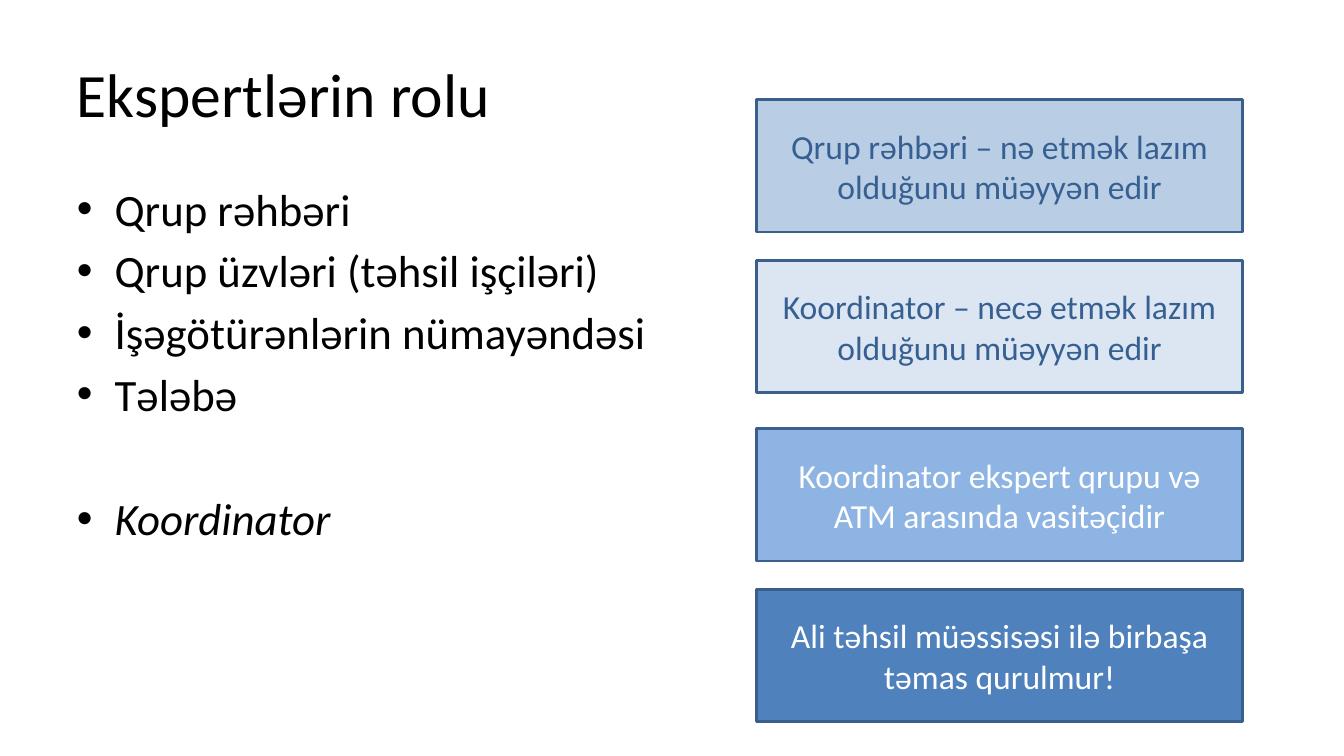
from lxml import etree
from pptx import Presentation
from pptx.dml.color import RGBColor
from pptx.enum.shapes import MSO_SHAPE
from pptx.enum.text import MSO_ANCHOR, PP_ALIGN
from pptx.oxml.ns import qn
from pptx.util import Cm, Pt

RECTANGLE = MSO_SHAPE.RECTANGLE
MIDDLE, TOP = MSO_ANCHOR.MIDDLE, MSO_ANCHOR.TOP
CENTER, LEFT = PP_ALIGN.CENTER, PP_ALIGN.LEFT

FONT = "Calibri"
COLORS = {
    "black": "000000",
    "white": "FFFFFF",
    "navy": "376092",
    "outline": "3A5F8C",
    "light": "B9CDE5",
    "pale": "DCE6F2",
    "medium": "8EB4E3",
    "strong": "4F81BD",
}

TITLE = "Ekspertlərin rolu"
ROLES = [
    ("Qrup rəhbəri", 5.6, False),
    ("Qrup üzvləri (təhsil işçiləri)", 5.6, False),
    ("İşəgötürənlərin nümayəndəsi", 5.6, False),
    ("Tələbə", 5.6, False),
    ("Koordinator", 50.3, True),
]
DUTIES = [
    ("Qrup rəhbəri – nə etmək lazım olduğunu müəyyən edir", 2.51, "light", "navy"),
    ("Koordinator – necə etmək lazım olduğunu müəyyən edir", 6.56, "pale", "navy"),
    ("Koordinator ekspert qrupu və ATM arasında vasitəçidir", 10.8, "medium", "white"),
    ("Ali təhsil müəssisəsi ilə birbaşa təmas qurulmur!", 14.85, "strong", "white"),
]
TEXT_LEFT, TEXT_WIDTH = 1.69, 30.48
DUTY_LEFT, DUTY_WIDTH, DUTY_HEIGHT = 19.07, 12.24, 3.34
BULLET_INDENT = 0.95


def color(name):
    return RGBColor.from_string(COLORS[name])


def write_text(shape, lines, size, color_name, alignment, anchor):
    frame = shape.text_frame
    frame.word_wrap = True
    frame.vertical_anchor = anchor
    frame.text = "\n".join(lines)
    for paragraph in frame.paragraphs:
        paragraph.alignment = alignment
        for run in paragraph.runs:
            run.font.name = FONT
            run.font.size = Pt(size)
            run.font.color.rgb = color(color_name)
    return frame.paragraphs


def add_bullet(paragraph):
    properties = paragraph._p.get_or_add_pPr()
    properties.set("marL", str(Cm(BULLET_INDENT)))
    properties.set("indent", str(-Cm(BULLET_INDENT)))
    etree.SubElement(properties, qn("a:buFont")).set("typeface", "Arial")
    etree.SubElement(properties, qn("a:buChar")).set("char", "•")


def add_text(slide, lines, top, height, size, anchor):
    box = slide.shapes.add_textbox(Cm(TEXT_LEFT), Cm(top), Cm(TEXT_WIDTH), Cm(height))
    return write_text(box, lines, size, "black", LEFT, anchor)


def add_duty(slide, text, top, fill, text_color):
    box = slide.shapes.add_shape(
        RECTANGLE, Cm(DUTY_LEFT), Cm(top), Cm(DUTY_WIDTH), Cm(DUTY_HEIGHT)
    )
    box.shadow.inherit = False
    box.fill.solid()
    box.fill.fore_color.rgb = color(fill)
    box.line.color.rgb = color("outline")
    box.line.width = Pt(2)
    write_text(box, [text], 24, text_color, CENTER, MIDDLE)


def main():
    presentation = Presentation()
    presentation.slide_width = Cm(33.87)
    presentation.slide_height = Cm(19.05)
    slide = presentation.slides.add_slide(presentation.slide_layouts[6])

    add_text(slide, [TITLE], 0.76, 3.18, 44, MIDDLE)
    roles = add_text(slide, [role[0] for role in ROLES], 4.45, 12.57, 32, TOP)
    for paragraph, (_, space_before, italic) in zip(roles, ROLES):
        paragraph.space_before = Pt(space_before)
        paragraph.runs[0].font.italic = italic
        add_bullet(paragraph)

    for duty in DUTIES:
        add_duty(slide, *duty)

    presentation.save("out.pptx")


if __name__ == "__main__":
    main()
